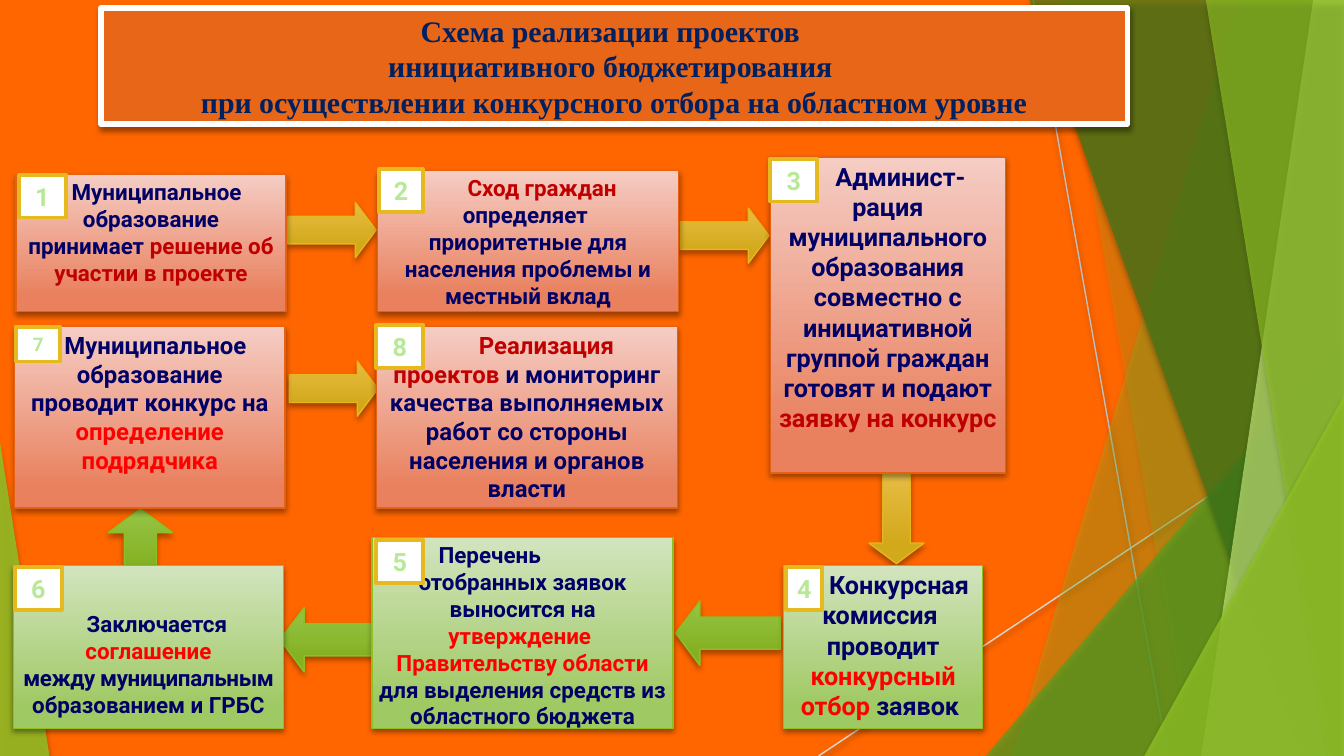
"""Build a slide with the eight-step scheme of initiative budgeting projects."""
import pptx
import pptx.dml.color
import pptx.enum.shapes
import pptx.enum.text
import pptx.oxml
import pptx.oxml.ns
import pptx.util
from lxml import etree

RGB = pptx.dml.color.RGBColor
ORANGE = RGB(0xFF, 0x66, 0x00)
TITLE_FILL = RGB(0xE7, 0x66, 0x18)
TITLE_TEXT = RGB(0x00, 0x20, 0x60)
WHITE = RGB(0xFF, 0xFF, 0xFF)
NAVY = RGB(0x00, 0x00, 0x66)
DARK_RED = RGB(0xC0, 0x00, 0x00)
RED = RGB(0xFF, 0x00, 0x00)
BADGE_LINE = RGB(0xE6, 0xB9, 0x1E)
BADGE_TEXT = RGB(0xB7, 0xE9, 0x96)
LEAF = RGB(0x90, 0xC2, 0x26)
GREEN = RGB(0x54, 0xA0, 0x21)
FOREST = RGB(0x3F, 0x78, 0x19)
LIME = RGB(0xC0, 0xE4, 0x74)
GREY = RGB(0xBF, 0xBF, 0xBF)
LIGHT_GREY = RGB(0xD9, 0xD9, 0xD9)
CORAL_CARD = (0.12, RGB(0xE9, 0x81, 0x5F), RGB(0xF5, 0xCD, 0xC4), RGB(0xE6, 0x62, 0x12))
GREEN_CARD = (0.12, RGB(0x9F, 0xC9, 0x62), RGB(0xD2, 0xE4, 0xBE), RGB(0x8D, 0xC1, 0x21))
GOLD_ARROW = (0.22, RGB(0xD2, 0xA9, 0x1B), RGB(0xE7, 0xBC, 0x43), RGB(0xE5, 0xB7, 0x18))
GREEN_ARROW = (0.22, RGB(0x84, 0xB1, 0x22), RGB(0x96, 0xC4, 0x46), RGB(0x8D, 0xC1, 0x21))
SOFT = (35, 3, 2)
FIRM = (38, 3.1, 1.6)
MSO = pptx.enum.shapes.MSO_SHAPE
CENTER = pptx.enum.text.PP_ALIGN.CENTER
LEFT = pptx.enum.text.PP_ALIGN.LEFT
MIDDLE = pptx.enum.text.MSO_ANCHOR.MIDDLE


def add_shadow(sp, opacity, blur, dist):
    sp.element.spPr.append(pptx.oxml.parse_xml(
        f'<a:effectLst {pptx.oxml.ns.nsdecls("a")}><a:outerShdw blurRad="{pptx.util.Pt(blur)}" '
        f'dist="{pptx.util.Pt(dist)}" dir="5400000" rotWithShape="0"><a:srgbClr val="000000">'
        f'<a:alpha val="{opacity * 1000}"/></a:srgbClr></a:outerShdw></a:effectLst>'))


def add_run(p, text, size, font, color):
    for i, line in enumerate(text.split("\n")):
        if i:
            p.add_line_break()
        r = p.add_run()
        r.text = line
        r.font.size = pptx.util.Pt(size)
        r.font.name = font
        r.font.bold = True
        r.font.color.rgb = color


prs = pptx.Presentation()
prs.slide_width, prs.slide_height = pptx.util.Pt(720), pptx.util.Pt(405)
s = prs.slides.add_slide(prs.slide_layouts[5])
s.background.fill.solid()
s.background.fill.fore_color.rgb = ORANGE

for ends, color in (((553.5, 0, 625.5, 405), GREY), ((720, 217.5, 438.5, 405), LIGHT_GREY)):
    line = s.shapes.add_connector(pptx.enum.shapes.MSO_CONNECTOR.STRAIGHT,
                                  *[pptx.util.Pt(v) for v in ends])
    line.line.color.rgb = color
    line.line.width = pptx.util.Pt(0.75)
    add_shadow(line, *FIRM)

facets = (
    ((663, 542), LEAF, 30),
    ((567.5, 638.5), LEAF, 20),
    ((528, 180, 192, 225, 1), GREEN, 72),
    ((551.5, 697), FOREST, 70),
    ((703.5, 643.5), LIME, 70),
    ((646, 711.5), LEAF, 65),
    ((613, 212, 107, 193, 1), LEAF, 80),
    ((0, 237, 26.5, 168, 0), LEAF, 85),
)
for geometry, color, opacity in facets:
    if len(geometry) == 2:
        top_x, bottom_x = [pptx.util.Pt(v) for v in geometry]
        fb = s.shapes.build_freeform(top_x, 0)
        fb.add_line_segments([(prs.slide_width, 0), (prs.slide_width, prs.slide_height),
                              (bottom_x, prs.slide_height)])
        sp = fb.convert_to_shape()
    else:
        sp = s.shapes.add_shape(MSO.ISOSCELES_TRIANGLE, *[pptx.util.Pt(v) for v in geometry[:4]])
        sp.adjustments[0] = geometry[4]
    sp.fill.solid()
    sp.fill.fore_color.rgb = color
    rgb = sp.element.spPr.find(".//" + pptx.oxml.ns.qn("a:srgbClr"))
    etree.SubElement(rgb, pptx.oxml.ns.qn("a:alpha")).set("val", str(opacity * 1000))
    sp.line.fill.background()
    add_shadow(sp, *SOFT)

arrows = (
    (MSO.LEFT_ARROW, (362, 322, 56, 34.5), GREEN_ARROW),
    (MSO.RIGHT_ARROW, (364.5, 111.5, 47.5, 29.5), GOLD_ARROW),
    (MSO.RIGHT_ARROW, (154, 108.5, 47.5, 29.5), GOLD_ARROW),
    (MSO.RIGHT_ARROW, (155, 193.5, 47.5, 29.5), GOLD_ARROW),
    (MSO.UP_ARROW, (58, 272.5, 34.5, 39.5), GREEN_ARROW),
    (MSO.LEFT_ARROW, (150, 325.5, 51, 34.5), GREEN_ARROW),
    (MSO.DOWN_ARROW, (465.5, 253, 29.5, 49), GOLD_ARROW),
)
cards = (
    ((8.6, 93.6, 144.7, 73.4), CORAL_CARD, 12, 2, [
        (CENTER, 6, [("Муниципальное образование\nпринимает ", NAVY),
                     ("решение об участии в проекте", DARK_RED)])]),
    ((202.3, 91.4, 161.3, 75.6), CORAL_CARD, 12, 2, [
        (CENTER, 15, [("Сход граждан ", DARK_RED),
                      ("определяет \nприоритетные для населения проблемы и местный вклад", NAVY)])]),
    ((412.6, 84.2, 126, 169.2), CORAL_CARD, 13.5, 2, [
        (CENTER, 13.5, [("Админист-", NAVY)]),
        (CENTER, 0, [("рация муниципального образования совместно с инициативной "
                      "группой граждан готовят и подают ", NAVY),
                     ("заявку на конкурс", DARK_RED)])]),
    ((419.8, 303.1, 106.6, 87.1), GREEN_CARD, 13.5, 2, [
        (CENTER, 17, [("Конкурсная комиссия \nпроводит ", NAVY),
                      ("конкурсный отбор", RED), (" заявок ", NAVY)])]),
    ((7.2, 303.1, 144.7, 87.1), GREEN_CARD, 12, 24, [
        (CENTER, 9, [("Заключается ", NAVY), ("соглашение", RED)]),
        (CENTER, 0, [("между муниципальным ", NAVY), ("образованием и ГРБС", NAVY)])]),
    ((7.9, 175, 144.7, 97.2), CORAL_CARD, 12.8, 2, [
        (CENTER, 6, [("Муниципальное образование проводит конкурс на ", NAVY),
                     ("определение подрядчика", RED)])]),
    ((199.4, 288, 161.3, 102.2), GREEN_CARD, 12, 2, [
        (LEFT, 32, [("Перечень", NAVY)]),
        (CENTER, 0, [("отобранных заявок выносится на ", NAVY),
                     ("утверждение \nПравительству области ", RED),
                     ("для выделения средств из областного бюджета", NAVY)])]),
    ((201.6, 175, 161.3, 97.2), CORAL_CARD, 12.8, 2, [
        (CENTER, 21, [("Реализация\nпроектов ", DARK_RED),
                      ("и мониторинг качества выполняемых работ со стороны "
                       "населения и органов власти", NAVY)])]),
)
blocks = [(kind, box, style, SOFT, 12, 2, []) for kind, box, style in arrows]
blocks += [(MSO.RECTANGLE, box, style, FIRM, size, top, paras)
           for box, style, size, top, paras in cards]
for kind, box, (start, dark, light, edge), shadow, size, top, paras in blocks:
    sp = s.shapes.add_shape(kind, *[pptx.util.Pt(v) for v in box])
    if kind != MSO.RECTANGLE:
        sp.adjustments[0], sp.adjustments[1] = 0.5, 0.375
    sp.fill.gradient()
    sp.fill.gradient_angle = 90
    for stop, position, color in zip(sp.fill.gradient_stops, (start, 1), (dark, light)):
        stop.position = position
        stop.color.rgb = color
    sp.line.color.rgb = edge
    sp.line.width = pptx.util.Pt(0.75)
    add_shadow(sp, *shadow)
    tf = sp.text_frame
    tf.word_wrap = True
    tf.vertical_anchor = pptx.enum.text.MSO_ANCHOR.TOP
    tf.margin_left = tf.margin_right = pptx.util.Pt(3.6)
    tf.margin_top, tf.margin_bottom = pptx.util.Pt(top), pptx.util.Pt(2)
    for i, (align, indent, runs) in enumerate(paras):
        p = tf.add_paragraph() if i else tf.paragraphs[0]
        p.alignment = align
        p._p.get_or_add_pPr().set("indent", str(pptx.util.Pt(indent)))
        for text, color in runs:
            add_run(p, text, size, "Roboto", color)
            if text.startswith("между"):
                p.runs[-1]._r.get_or_add_rPr().set("spc", "-20")

title = s.shapes.title
title.element.getparent().append(title.element)
title.left, title.top, title.width, title.height = [pptx.util.Pt(v) for v in (54, 4.3, 550, 62)]
title.fill.solid()
title.fill.fore_color.rgb = TITLE_FILL
title.line.color.rgb = WHITE
title.line.width = pptx.util.Pt(3)
add_shadow(title, *FIRM)
tf = title.text_frame
tf.word_wrap = True
tf.auto_size = pptx.enum.text.MSO_AUTO_SIZE.NONE
tf.vertical_anchor = MIDDLE
tf.margin_left = tf.margin_right = pptx.util.Pt(6)
tf.margin_top = tf.margin_bottom = pptx.util.Pt(3)
for i, text in enumerate(("Схема реализации проектов ", "инициативного бюджетирования ",
                          "при осуществлении конкурсного отбора на областном уровне")):
    p = tf.add_paragraph() if i else tf.paragraphs[0]
    p.alignment = CENTER
    add_run(p, text, 16, "Times New Roman", TITLE_TEXT)

badges = ((10.1, 93.6, 25.2, 23), (203, 90.7, 23.8, 23), (412.6, 85, 25.2, 23),
          (421.2, 303.8, 19.4, 23), (201.6, 289.4, 25.2, 23), (7.9, 303.8, 25.2, 23),
          (8.6, 175, 23.8, 18.7), (201.6, 174.2, 25.2, 23))
for number, box in enumerate(badges, 1):
    sp = s.shapes.add_shape(MSO.RECTANGLE, *[pptx.util.Pt(v) for v in box])
    sp.shadow.inherit = False
    sp.fill.solid()
    sp.fill.fore_color.rgb = WHITE
    sp.line.color.rgb = BADGE_LINE
    sp.line.width = pptx.util.Pt(2)
    tf = sp.text_frame
    tf.vertical_anchor = MIDDLE
    tf.margin_left = tf.margin_right = tf.margin_top = tf.margin_bottom = 0
    tf.paragraphs[0].alignment = CENTER
    add_run(tf.paragraphs[0], str(number), 10 if number == 7 else 13.5, "Roboto", BADGE_TEXT)

prs.save("out.pptx")
